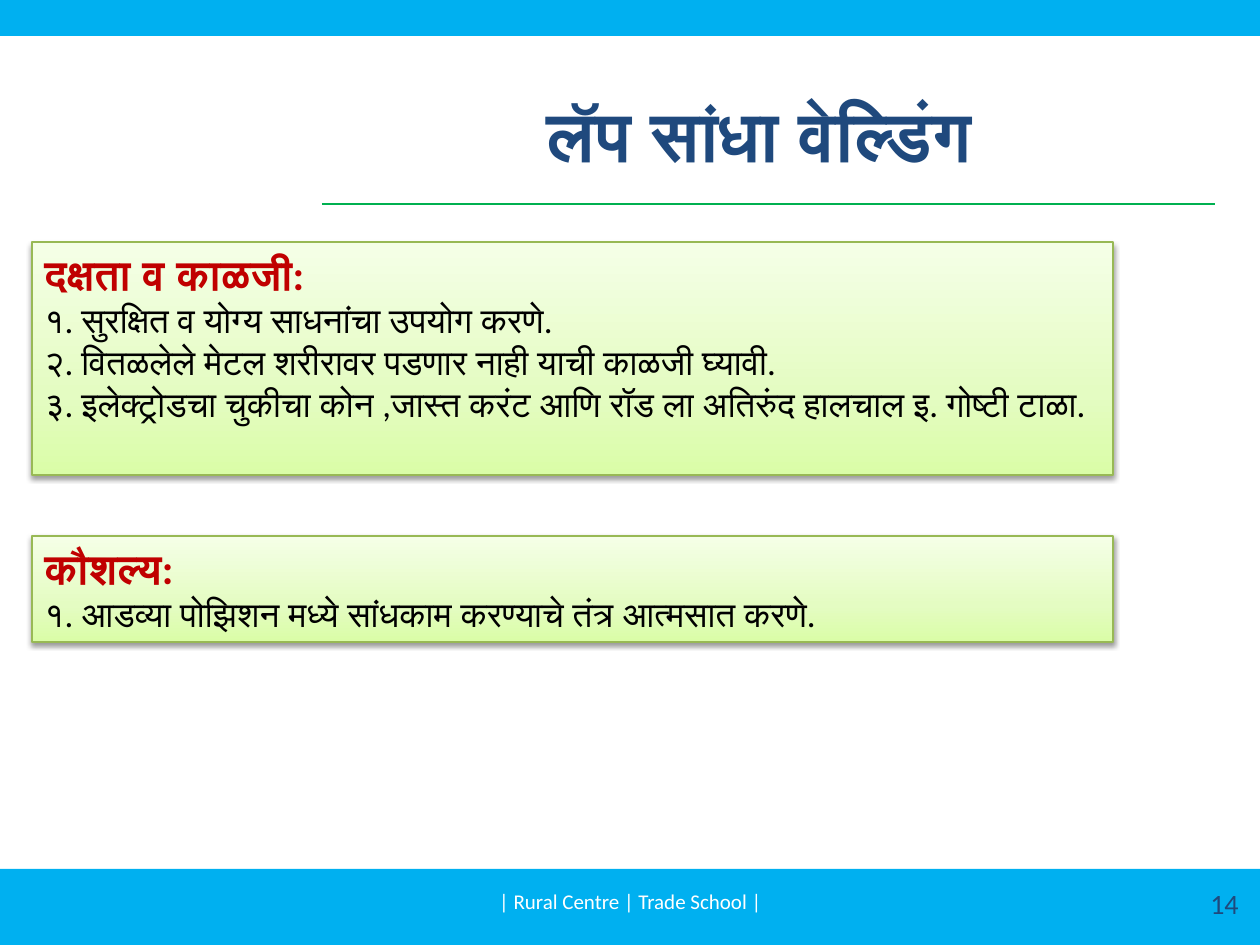
import copy

import pptx
import pptx.dml.color
import pptx.enum.shapes
import pptx.enum.text
import pptx.oxml
import pptx.oxml.ns
import pptx.util

RGB = pptx.dml.color.RGBColor
ALIGN = pptx.enum.text.PP_ALIGN
ANCHOR = pptx.enum.text.MSO_ANCHOR
RECTANGLE = pptx.enum.shapes.MSO_SHAPE.RECTANGLE

SKY = RGB(0x00, 0xB0, 0xF0)
GREEN = RGB(0x00, 0xB0, 0x50)
NAVY = RGB(0x1F, 0x49, 0x7D)
RED = RGB(0xC0, 0x00, 0x00)
BLACK = RGB(0x00, 0x00, 0x00)
WHITE = RGB(0xFF, 0xFF, 0xFF)
PANEL_EDGE = RGB(0x98, 0xB9, 0x55)
PANEL_STOPS = [
    (0, RGB(0xDA, 0xFD, 0xA7)),
    (0.35, RGB(0xE4, 0xFC, 0xC2)),
    (1, RGB(0xF5, 0xFF, 0xE7)),
]
FONT = "Calibri"
PANEL_LEFT, PANEL_WIDTH = 32, 1081
SHADOW = (
    '<a:outerShdw %s blurRad="40000" dist="20000" dir="5400000" rotWithShape="0">'
    '<a:srgbClr val="000000"><a:alpha val="38000"/></a:srgbClr></a:outerShdw>'
    % pptx.oxml.ns.nsdecls("a")
)


def px(*lengths):
    return [pptx.util.Emu(round(length * 914400 / 126)) for length in lengths]


def set_font(para, size, color, bold=False):
    para.font.name = FONT
    para.font.size = pptx.util.Pt(size)
    para.font.color.rgb = color
    para.font.bold = bold


def add_band(page, top, height):
    band = page.shapes.add_shape(RECTANGLE, *px(0, top, 1260, height))
    band.shadow.inherit = False
    band.fill.solid()
    band.fill.fore_color.rgb = SKY
    band.line.fill.background()


def add_rule(page, left, right, y):
    rule = page.shapes.add_connector(
        pptx.enum.shapes.MSO_CONNECTOR.STRAIGHT, *px(left, y, right, y))
    rule.line.color.rgb = GREEN
    rule.line.width = pptx.util.Pt(0.75)
    properties = rule._element.spPr
    properties.append(properties.makeelement(pptx.oxml.ns.qn("a:effectLst"), {}))


def set_title(page, text):
    title = page.shapes.title
    title.left, title.top, title.width, title.height = px(258, 32, 1002, 203)
    title.text_frame.vertical_anchor = ANCHOR.MIDDLE
    para = title.text_frame.paragraphs[0]
    para.text = text
    para.alignment = ALIGN.CENTER
    set_font(para, 40, NAVY, bold=True)


def add_label(page, text, place, size, color, alignment):
    box = page.shapes.add_textbox(*px(*place))
    box.text_frame.word_wrap = True
    box.text_frame.vertical_anchor = ANCHOR.MIDDLE
    para = box.text_frame.paragraphs[0]
    para.text = text
    para.alignment = alignment
    set_font(para, size, color)


def fill_gradient(shape):
    """Blend the panel colours from the bottom edge to the top."""
    shape.fill.gradient()
    shape.fill.gradient_angle = 90
    first = shape.fill.gradient_stops[0]._gs
    first.addnext(copy.deepcopy(first))
    for stop, (position, color) in zip(shape.fill.gradient_stops, PANEL_STOPS):
        stop.position = position
        stop.color.rgb = color


def add_panel(page, top, height, heading, points):
    panel = page.shapes.add_shape(
        RECTANGLE, *px(PANEL_LEFT, top, PANEL_WIDTH, height))
    fill_gradient(panel)
    panel.line.color.rgb = PANEL_EDGE
    panel.line.width = pptx.util.Pt(0.75)
    panel.shadow.inherit = False
    effects = panel._element.spPr.find(pptx.oxml.ns.qn("a:effectLst"))
    effects.append(pptx.oxml.parse_xml(SHADOW))

    frame = panel.text_frame
    frame.word_wrap = True
    frame.vertical_anchor = ANCHOR.TOP
    frame.text = "\n".join([heading, *points])
    for index, para in enumerate(frame.paragraphs):
        para.alignment = ALIGN.LEFT
        if index == 0:
            set_font(para, 24, RED, bold=True)
        else:
            set_font(para, 20, BLACK)


def main():
    deck = pptx.Presentation()
    deck.slide_width, deck.slide_height = px(1260, 945)
    page = deck.slides.add_slide(deck.slide_layouts.get_by_name("Title Only"))

    add_band(page, 869, 76)
    add_rule(page, 322, 1215, 204)
    add_band(page, 0, 36)
    set_title(page, "लॅप सांधा वेल्डिंग")
    add_label(page, "14", (958, 878, 293, 50), 16, NAVY, ALIGN.RIGHT)
    add_label(page, "| Rural Centre | Trade School |", (431, 876, 399, 50),
              12, WHITE, ALIGN.CENTER)
    add_panel(page, 242, 233, "दक्षता व काळजी:", [
        "१. सुरक्षित व योग्य साधनांचा उपयोग करणे.",
        "२. वितळलेले मेटल शरीरावर पडणार नाही याची काळजी घ्यावी.",
        "३. इलेक्ट्रोडचा चुकीचा कोन ,जास्त करंट आणि रॉड ला अतिरुंद हालचाल इ. गोष्टी टाळा.",
    ])
    add_panel(page, 536, 106, "कौशल्य:", [
        "१. आडव्या पोझिशन मध्ये सांधकाम करण्याचे तंत्र आत्मसात करणे.",
    ])
    deck.save("out.pptx")


if __name__ == "__main__":
    main()
